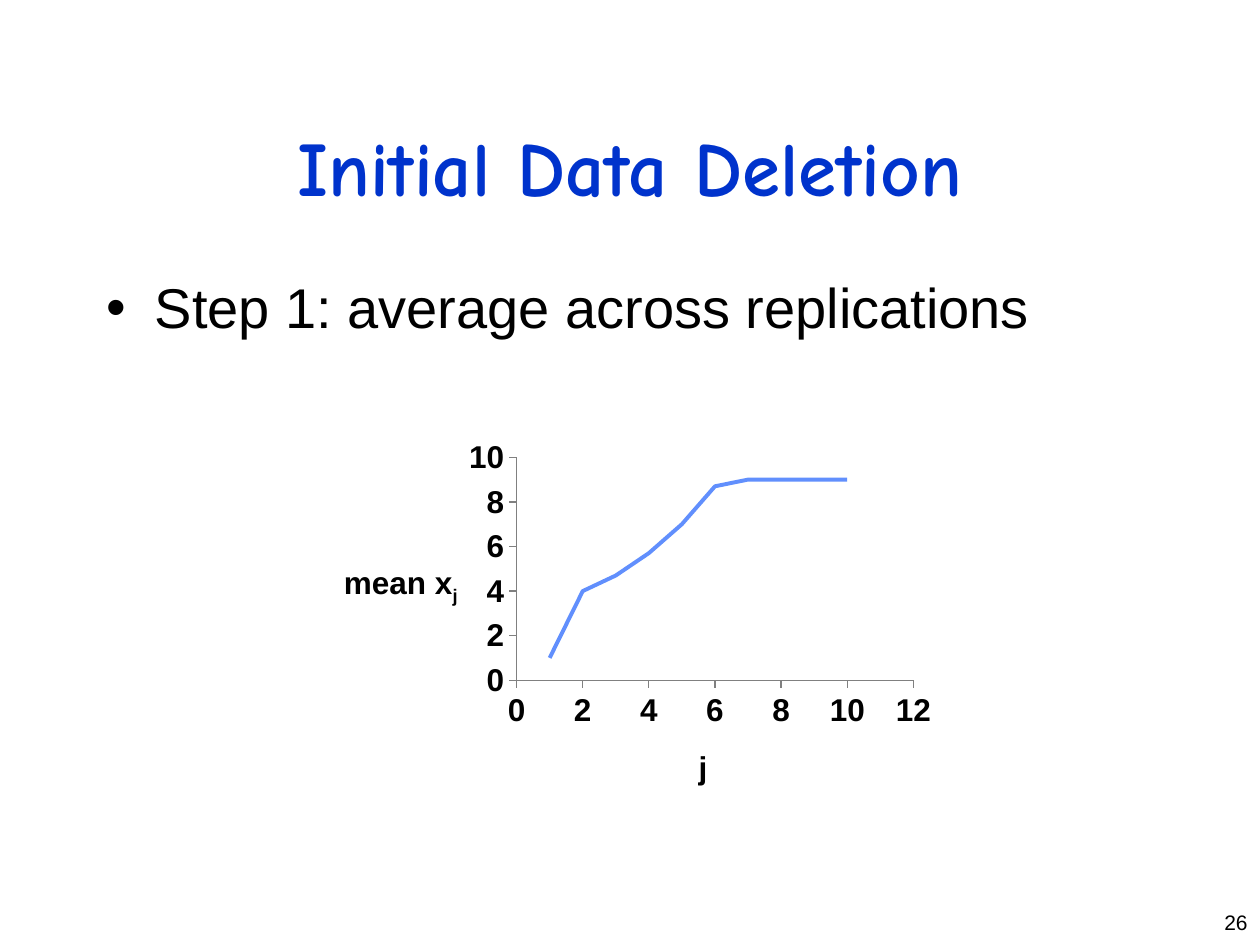
from collections import namedtuple
from dataclasses import dataclass

from lxml.etree import SubElement
from pptx import Presentation
from pptx.chart.data import XyChartData
from pptx.dml.color import RGBColor
from pptx.enum.chart import XL_CHART_TYPE, XL_TICK_MARK
from pptx.enum.text import MSO_ANCHOR, PP_ALIGN
from pptx.oxml.ns import qn
from pptx.util import Inches, Pt

Box = namedtuple("Box", "left top width height")


@dataclass(frozen=True)
class Theme:
    """Colours, fonts and type sizes of the slide."""

    title_color: RGBColor = RGBColor(0x00, 0x33, 0xCC)
    text_color: RGBColor = RGBColor(0x00, 0x00, 0x00)
    curve_color: RGBColor = RGBColor(0x61, 0x8F, 0xFD)
    axis_color: RGBColor = RGBColor(0x80, 0x80, 0x80)
    title_font: str = "Comic Neue"
    text_font: str = "Arial"
    title_size: Pt = Pt(44)
    step_size: Pt = Pt(32)
    chart_size: Pt = Pt(18)
    number_size: Pt = Pt(12)


THEME = Theme()
SLIDE_WIDTH, SLIDE_HEIGHT = Inches(10), Inches(7.5)
MEANS = (1, 4, 4.7, 5.7, 7, 8.7, 9, 9, 9, 9)


def share(left, top, width, height):
    """Return a box given as shares of the slide's size."""
    return Box(int(left * SLIDE_WIDTH), int(top * SLIDE_HEIGHT),
               int(width * SLIDE_WIDTH), int(height * SLIDE_HEIGHT))


def style(font, size, color=THEME.text_color, name=THEME.text_font, bold=False):
    """Give a font its face, size, weight and colour."""
    font.name, font.size, font.bold = name, size, bold
    font.color.rgb = color


def add_line_of_text(slide, box, wording, align, anchor=MSO_ANCHOR.TOP):
    """Place one wrapped paragraph in the box and return it."""
    frame = slide.shapes.add_textbox(*box).text_frame
    frame.word_wrap = True
    frame.vertical_anchor = anchor
    frame.text = wording
    paragraph = frame.paragraphs[0]
    paragraph.alignment = align
    return paragraph


def add_heading(slide, box):
    """Place the centred slide title."""
    heading = add_line_of_text(slide, box, "Initial Data Deletion",
                               PP_ALIGN.CENTER, MSO_ANCHOR.MIDDLE)
    style(heading.runs[0].font, THEME.title_size, THEME.title_color,
          THEME.title_font, True)


def add_step(slide, box):
    """Place the bulleted step with a hanging indent."""
    step = add_line_of_text(slide, box, "Step 1: average across replications",
                            PP_ALIGN.LEFT)
    step.line_spacing = 0.9
    step.space_before = Pt(THEME.step_size.pt * 0.2)
    style(step.runs[0].font, THEME.step_size)
    properties = step._p.get_or_add_pPr()
    indent = Inches(0.38)
    properties.set("marL", str(indent))
    properties.set("indent", str(-indent))
    SubElement(properties, qn("a:buFont"), typeface=THEME.text_font)
    SubElement(properties, qn("a:buChar"), char="•")


def add_page_number(slide, box):
    """Place the page number at the right edge."""
    number = add_line_of_text(slide, box, "26", PP_ALIGN.RIGHT)
    style(number.runs[0].font, THEME.number_size)


def set_layout(parent, position, **shares):
    """Fix a chart part at shares of the chart's size."""
    for automatic in parent.findall(qn("c:layout")):
        parent.remove(automatic)
    layout = SubElement(parent, qn("c:layout"))
    parent.insert(position, layout)
    manual = SubElement(layout, qn("c:manualLayout"))
    if "w" in shares:
        SubElement(manual, qn("c:layoutTarget"), val="inner")
    for side in ("x", "y"):
        SubElement(manual, qn(f"c:{side}Mode"), val="edge")
    for side, value in shares.items():
        SubElement(manual, qn(f"c:{side}"), val=str(value))


def format_axis(axis, maximum, label, subscript, x, y):
    """Set an axis scale, its line and its horizontal title."""
    axis.minimum_scale, axis.maximum_scale, axis.major_unit = 0, maximum, 2
    axis.has_major_gridlines = False
    axis.major_tick_mark = XL_TICK_MARK.OUTSIDE
    axis.minor_tick_mark = XL_TICK_MARK.NONE
    axis.format.line.color.rgb = THEME.axis_color
    axis.format.line.width = Pt(0.75)
    axis.tick_labels.number_format = "General"
    axis.tick_labels.number_format_is_linked = False
    style(axis.tick_labels.font, THEME.chart_size, bold=True)

    frame = axis.axis_title.text_frame
    frame._txBody.bodyPr.set("rot", "0")
    frame._txBody.bodyPr.set("vert", "horz")
    frame.text = label
    title = frame.paragraphs[0]
    if subscript:
        index = title.add_run()
        index.text = subscript
        index.font._element.set("baseline", "-25000")
    for run in title.runs:
        style(run.font, THEME.chart_size, bold=True)
    set_layout(axis.axis_title._element, 1, x=x, y=y)


def add_means_chart(slide, box):
    """Place the curve of means across replications."""
    data = XyChartData()
    means = data.add_series("Series 1")
    for j, mean in enumerate(MEANS, start=1):
        means.add_data_point(j, mean)
    chart = slide.shapes.add_chart(
        XL_CHART_TYPE.XY_SCATTER_LINES_NO_MARKERS, *box, data).chart
    chart.has_title = chart.has_legend = False
    style(chart.font, THEME.chart_size, bold=True)
    plot = chart.plots[0]
    plot.vary_by_categories = False
    curve = plot.series[0]
    curve.smooth = False
    curve.format.line.color.rgb = THEME.curve_color
    curve.format.line.width = Pt(2.25)
    format_axis(chart.category_axis, 12, "j", "", 0.6, 0.82)
    format_axis(chart.value_axis, 10, "mean x", "j", 0.04, 0.34)
    set_layout(chart._chartSpace.chart.plotArea, 0, x=0.32, y=0.07, w=0.63, h=0.59)


def main():
    """Build and save the slide."""
    deck = Presentation()
    deck.slide_width, deck.slide_height = SLIDE_WIDTH, SLIDE_HEIGHT
    slide = deck.slides.add_slide(deck.slide_layouts[6])
    add_heading(slide, share(0.075, 0.09, 0.85, 0.17))
    add_step(slide, share(0.075, 0.29, 0.85, 0.6))
    add_page_number(slide, share(0.925, 0.956, 0.075, 0.044))
    add_means_chart(slide, share(0.25, 0.456, 0.5, 0.4))
    deck.save("out.pptx")


if __name__ == "__main__":
    main()
